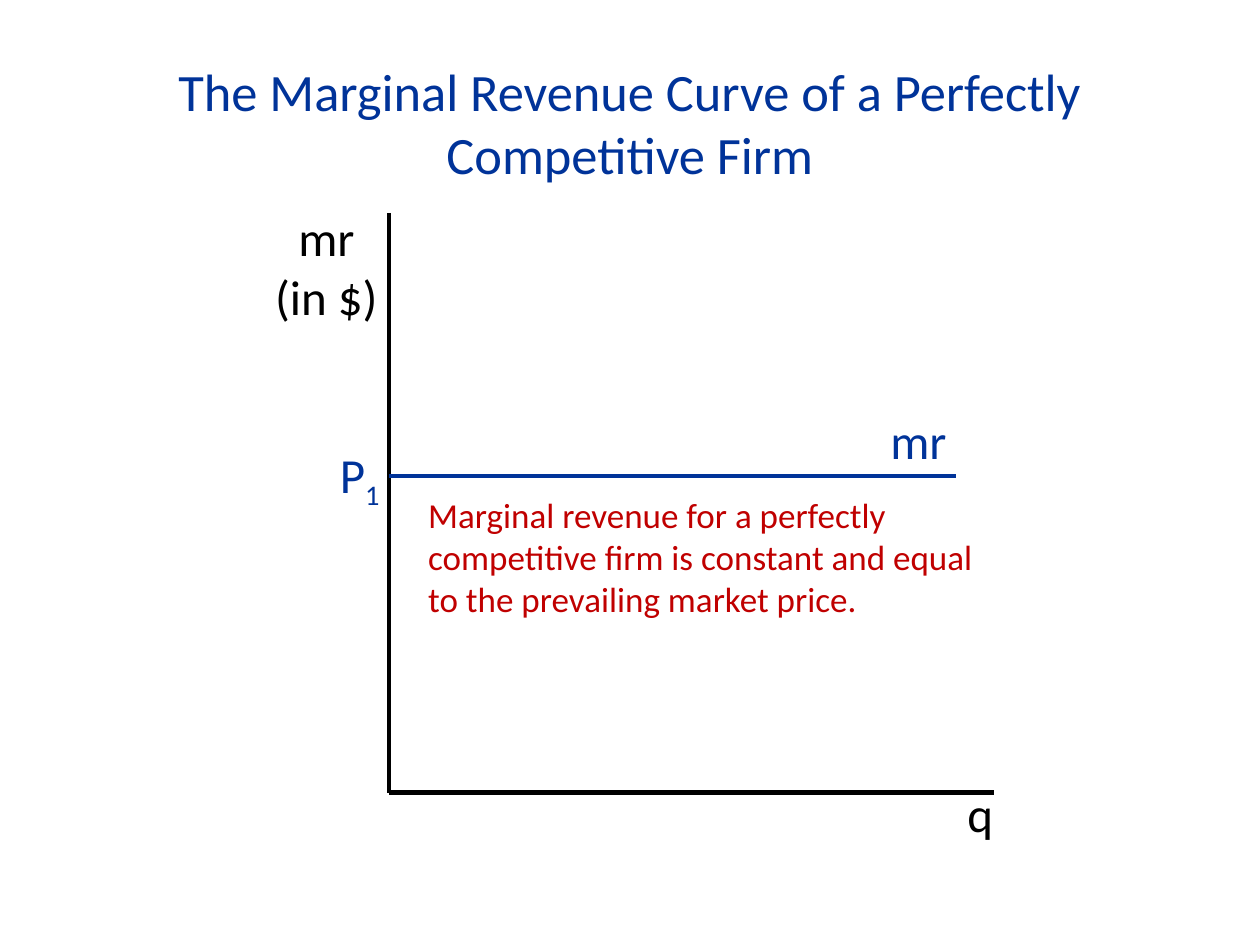
import pptx
import pptx.util
import pptx.dml.color
import pptx.enum.shapes
import pptx.enum.text
import pptx.oxml.ns
import lxml.etree

Inches = pptx.util.Inches
Align = pptx.enum.text.PP_ALIGN
Anchor = pptx.enum.text.MSO_ANCHOR
COLORS = {"blue": "003399", "black": "000000", "red": "C00000"}

presentation = pptx.Presentation()
presentation.slide_width = Inches(10)
presentation.slide_height = Inches(7.5)
slide = presentation.slides.add_slide(presentation.slide_layouts[6])


def add_line(start, end, color):
    line = slide.shapes.add_connector(
        pptx.enum.shapes.MSO_CONNECTOR.STRAIGHT,
        *[Inches(value) for value in start + end])
    line.line.color.rgb = pptx.dml.color.RGBColor.from_string(COLORS[color])
    line.line.width = pptx.util.Pt(2.5)
    lxml.etree.SubElement(line._element.spPr, pptx.oxml.ns.qn("a:effectLst"))


def add_label(text, box, size, color, align, anchor=Anchor.TOP):
    label = slide.shapes.add_textbox(*[Inches(value) for value in box])
    text_frame = label.text_frame
    text_frame.word_wrap = True
    text_frame.vertical_anchor = anchor
    text_frame.text = text
    paragraph = text_frame.paragraphs[0]
    paragraph.alignment = align
    font = paragraph.runs[0].font
    font.name = "Calibri"
    font.size = pptx.util.Pt(size)
    font.color.rgb = pptx.dml.color.RGBColor.from_string(COLORS[color])
    return paragraph


# Title
add_label("The Marginal Revenue Curve of a Perfectly Competitive Firm",
          (0.7, 0.41, 8.6, 1.11), 30, "blue", Align.CENTER, Anchor.MIDDLE)

# Axes and their labels
origin_x, origin_y = 3.09, 6.29
add_line((origin_x, 1.69), (origin_x, origin_y), "black")
add_line((origin_x, origin_y), (7.89, origin_y), "black")
add_label("q", (7.27, 6.17, 0.71, 0.57), 28, "black", Align.RIGHT)
add_label("mr (in $)", (2.04, 1.6, 1.1, 1.04), 28, "black", Align.CENTER)

# Price label with a subscript
price_paragraph = add_label("P", (1.86, 3.48, 1.25, 0.57), 28, "blue", Align.RIGHT)
subscript = price_paragraph.add_run()
subscript.text = "1"
subscript.font.name = "Calibri"
subscript.font.size = pptx.util.Pt(28)
subscript.font.color.rgb = pptx.dml.color.RGBColor.from_string(COLORS["blue"])
subscript._r.get_or_add_rPr().set("baseline", "-25000")

# Marginal revenue curve
price_y = 3.78
add_line((origin_x, price_y), (7.59, price_y), "blue")
add_label("mr", (5.66, 3.21, 1.95, 0.57), 28, "blue", Align.RIGHT)

# Explanation
add_label("Marginal revenue for a perfectly competitive firm is constant "
          "and equal to the prevailing market price.",
          (3.3, 3.86, 4.65, 1.11), 20, "red", Align.LEFT, Anchor.MIDDLE)

presentation.save("out.pptx")
